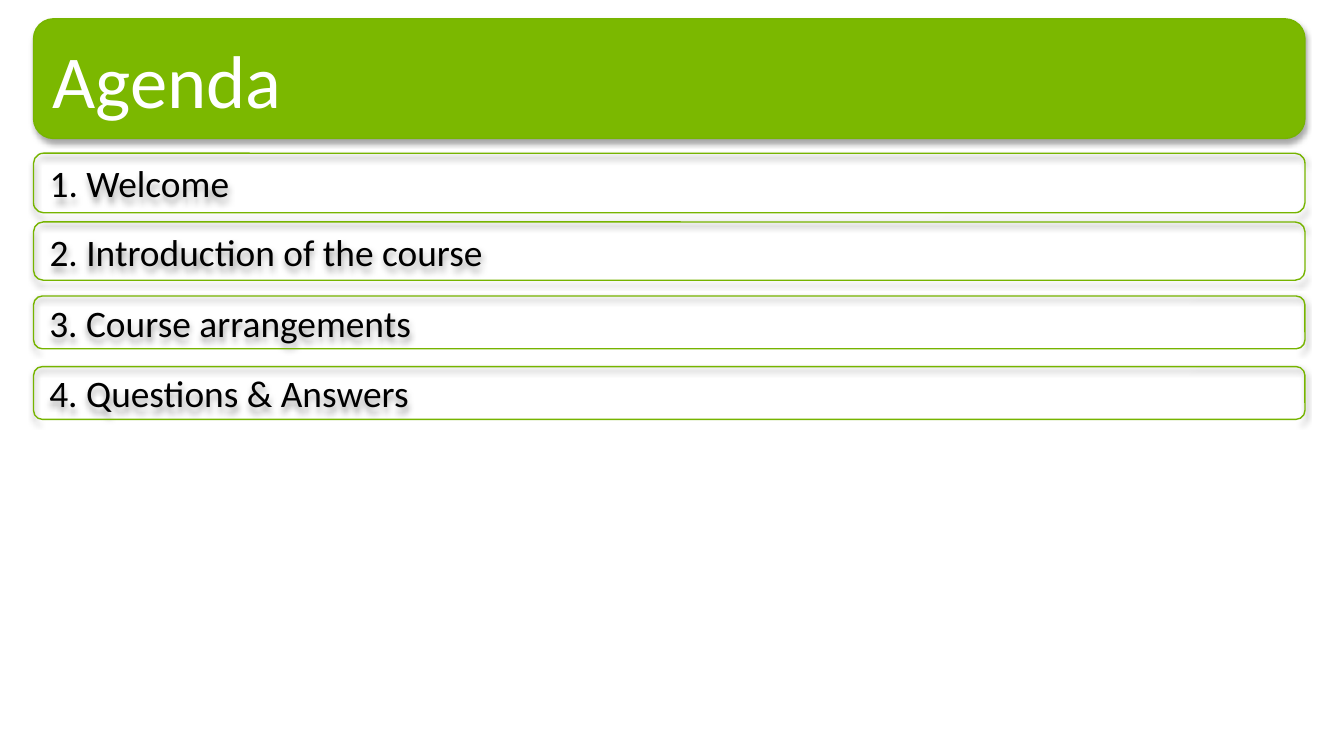
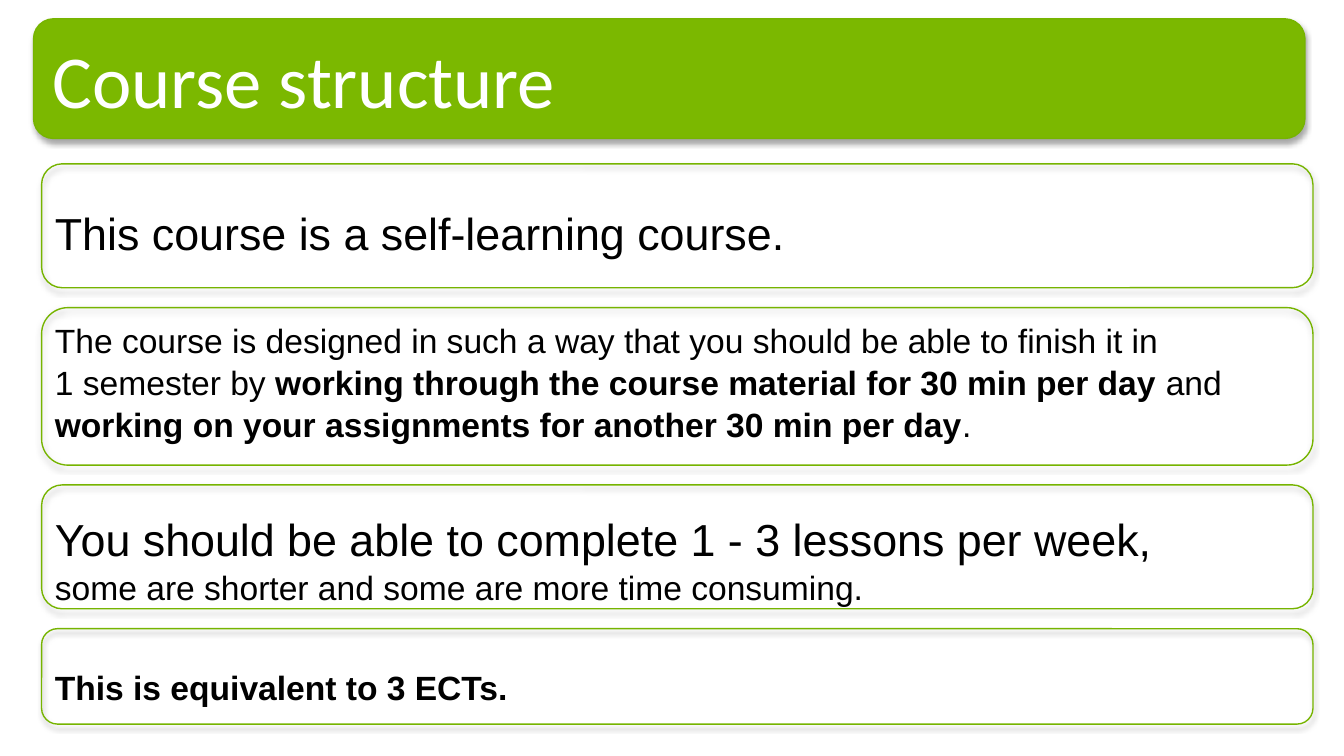
from lxml import etree
from pptx import Presentation
from pptx.dml.color import RGBColor
from pptx.enum.shapes import MSO_SHAPE
from pptx.enum.text import MSO_ANCHOR, PP_ALIGN
from pptx.oxml.ns import qn
from pptx.util import Pt

COLORS = {
    "band": "7BB800",
    "outline": "76B400",
    "title": "FFFFFF",
    "text": "000000",
}
HEADING_FONT, BODY_FONT = "Calibri", "Arial"
CARD_WIDTH = 681.1
TITLE_BOX = (18, 10.1, CARD_WIDTH, 64.1)


def color(name):
    return RGBColor.from_string(COLORS[name])


def set_font(font, name, size, color_name):
    font.name = name
    font.size = Pt(size)
    font.color.rgb = color(color_name)


def add_shadow(shape):
    effects = etree.SubElement(shape._element.spPr, qn("a:effectLst"))
    shadow = etree.SubElement(
        effects, qn("a:outerShdw"), blurRad=str(Pt(3.1)), dist=str(Pt(1.8)),
        dir="5400000", rotWithShape="0")
    black = etree.SubElement(shadow, qn("a:srgbClr"), val=COLORS["text"])
    etree.SubElement(black, qn("a:alpha"), val="35000")


def add_card(slide, box, fill=None):
    """Add a rounded, outlined card with a soft shadow."""
    card = slide.shapes.add_shape(MSO_SHAPE.ROUNDED_RECTANGLE, *map(Pt, box))
    if fill:
        card.fill.solid()
        card.fill.fore_color.rgb = color(fill)
    else:
        card.fill.background()
    card.line.color.rgb = color("outline")
    card.line.width = Pt(0.75)
    add_shadow(card)
    return card


def add_label(card, text, size, color_name):
    frame = card.text_frame
    frame.word_wrap = True
    frame.vertical_anchor = MSO_ANCHOR.MIDDLE
    paragraph = frame.paragraphs[0]
    paragraph.text = text
    paragraph.alignment = PP_ALIGN.LEFT
    set_font(paragraph.font, HEADING_FONT, size, color_name)


def add_titled_slide(presentation, title):
    slide = presentation.slides.add_slide(presentation.slide_layouts[6])
    add_label(add_card(slide, TITLE_BOX, "band"), title, 40, "title")
    return slide


def add_agenda(slide, left, items):
    """Add numbered agenda rows given as (text, top, height)."""
    for number, (text, top, height) in enumerate(items, 1):
        card = add_card(slide, (left, top, CARD_WIDTH, height))
        add_label(card, f"{number}. {text}", 20, "text")


def add_body_text(slide, box, lines):
    """Add lines given as (size, space before, runs of (text, bold))."""
    frame = slide.shapes.add_textbox(*map(Pt, box)).text_frame
    frame.word_wrap = True
    for index, (size, space, runs) in enumerate(lines):
        paragraph = frame.add_paragraph() if index else frame.paragraphs[0]
        paragraph.line_spacing = 1.04
        paragraph.space_before = Pt(space)
        set_font(paragraph.font, BODY_FONT, size, "text")
        for text, bold in runs:
            run = paragraph.add_run()
            run.text = text
            run.font.bold = bold


def add_card_stack(slide, left, top, heights, gap):
    for height in heights:
        add_card(slide, (left, top, CARD_WIDTH, height))
        top += height + gap


def main():
    presentation = Presentation()
    presentation.slide_width, presentation.slide_height = Pt(720), Pt(405)

    agenda = add_titled_slide(presentation, "Agenda")
    add_agenda(agenda, 18, [
        ("Welcome", 82.1, 31.9),
        ("Introduction of the course", 118.9, 31.2),
        ("Course arrangements", 158.6, 28.3),
        ("Questions & Answers", 196.4, 28.3),
    ])

    structure = add_titled_slide(presentation, "Course structure")
    add_body_text(structure, (22.3, 105.8, 697.7, 273.6), [
        (24, 0, [("This course is a self-learning course.", False)]),
        (18, 31.5, [("The course is designed in such a way that you should "
                     "be able to finish it in", False)]),
        (18, 0, [("1 semester by ", False),
                 ("working through the course material for 30 min per day ",
                  True),
                 ("and ", False),
                 ("working on your assignments for another 30 min per day",
                  True),
                 (".", False)]),
        (24, 35, [("You should be able to complete 1 - 3 lessons per week,",
                   False)]),
        (18, 0, [("some are shorter and some are more time consuming.",
                  False)]),
        (18, 31, [("This is equivalent to 3 ECTs.", True)]),
    ])
    add_card_stack(structure, 22.3, 87.8, (66.4, 84.4, 66.4, 51.1), 10.6)

    presentation.save("out.pptx")


if __name__ == "__main__":
    main()
